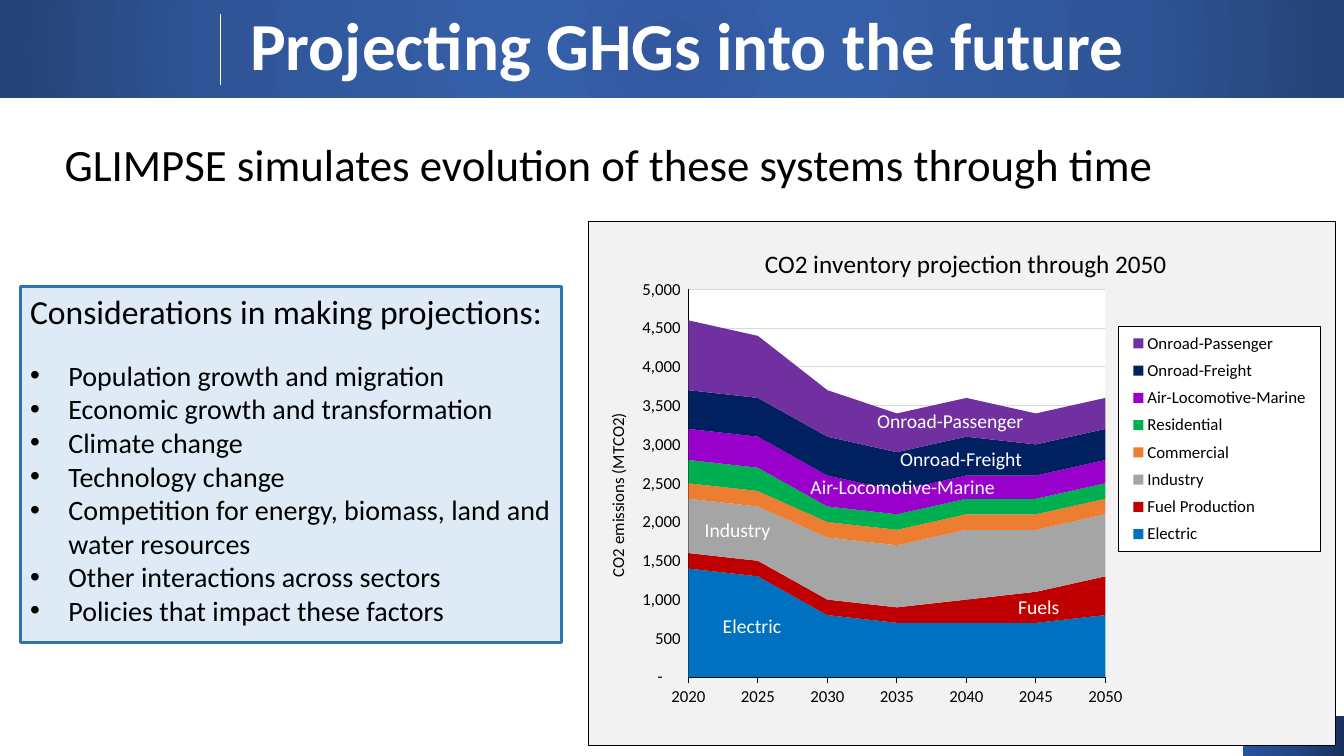
from lxml.etree import fromstring
from pptx import Presentation
from pptx.chart.data import CategoryChartData
from pptx.dml.color import RGBColor
from pptx.enum.chart import XL_CHART_TYPE, XL_LEGEND_POSITION, XL_TICK_MARK
from pptx.enum.shapes import MSO_CONNECTOR, MSO_SHAPE
from pptx.enum.text import MSO_ANCHOR, PP_ALIGN
from pptx.oxml import parse_xml
from pptx.oxml.ns import nsdecls, qn
from pptx.util import Inches, Pt

THEME = {
    "font": "Calibri",
    "white": RGBColor.from_string("FFFFFF"),
    "black": RGBColor.from_string("000000"),
    "grid": RGBColor.from_string("D9D9D9"),
    "box_fill": RGBColor.from_string("DEEBF7"),
    "box_line": RGBColor.from_string("2E75B6"),
    "header": [(0, "32599F"), (23, "355FA9"), (69, "2F5597"), (97, "264478")],
    "corner": [(0, "18315E"), (50, "224585"), (100, "28529E")],
    "title": Pt(48), "lead": Pt(32), "heading": Pt(24), "list": Pt(20),
    "chart_title": Pt(18), "label": Pt(14), "axis": Pt(12),
}

prs = Presentation()
prs.slide_width, prs.slide_height = Inches(13.33), Inches(7.5)
s = prs.slides.add_slide(prs.slide_layouts[1])


def at(x, y, w, h):
    """Turn percent shares of the slide into left, top, width, height."""
    across, down = prs.slide_width / 100, prs.slide_height / 100
    return int(x * across), int(y * down), int(w * across), int(h * down)


def style(font, size, color, bold=False):
    font.name, font.size, font.bold = THEME["font"], size, bold
    font.color.rgb = color


# Header band and corner block, behind the placeholders
RADIAL = ('<a:path path="circle"><a:fillToRect l="50000" t="50000" '
          'r="50000" b="50000"/></a:path>')
LINEAR = '<a:lin ang="10800000" scaled="0"/>'
bands = [("header", (0, 0, 100, 12.93), RADIAL),
         ("corner", (92.5, 94.67, 7.5, 5.33), LINEAR)]
for z, (name, place, direction) in enumerate(bands, start=2):
    sp = s.shapes.add_shape(MSO_SHAPE.RECTANGLE, *at(*place))
    sp.shadow.inherit = False
    sp.line.fill.background()
    sp.fill.background()
    stops = "".join(f'<a:gs pos="{pos * 1000}"><a:srgbClr val="{color}"/></a:gs>'
                    for pos, color in THEME[name])
    props = sp.element.spPr
    props.replace(props.find(qn("a:noFill")), parse_xml(
        f'<a:gradFill {nsdecls("a")}><a:gsLst>{stops}</a:gsLst>{direction}</a:gradFill>'))
    s.shapes.element.insert(z, sp.element)

# Header divider
x, top, _, height = at(16.43, 1.87, 0, 9.33)
divider = s.shapes.add_connector(MSO_CONNECTOR.STRAIGHT, x, top, x, top + height)
divider.line.color.rgb = THEME["white"]
divider.line.width = Pt(1)
divider.element.spPr.append(parse_xml(f'<a:effectLst {nsdecls("a")}/>'))

# Title and lead sentence
lead = s.placeholders[1]
texts = [
    (s.shapes.title, "Projecting GHGs into the future", (17.85, 0, 82.15, 12.8),
     THEME["title"], THEME["white"], True),
    (lead, "GLIMPSE simulates evolution of these systems through time",
     (4.05, 18.27, 95.95, 79.6), THEME["lead"], THEME["black"], False),
]
for sp, text, place, size, color, bold in texts:
    sp.left, sp.top, sp.width, sp.height = at(*place)
    sp.text_frame.text = text
    p = sp.text_frame.paragraphs[0]
    p.alignment, p.line_spacing, p.space_before = PP_ALIGN.LEFT, 0.9, Pt(0)
    style(p.runs[0].font, size, color, bold)
pPr = lead.text_frame.paragraphs[0]._p.get_or_add_pPr()
pPr.set("marL", "0")
pPr.set("indent", "0")
pPr.append(parse_xml(f'<a:buNone {nsdecls("a")}/>'))

# Emissions chart
emissions = [
    ("Electric", "0070C0", (1400, 1300, 800, 700, 700, 700, 800)),
    ("Fuel Production", "C00000", (200, 200, 200, 200, 300, 400, 500)),
    ("Industry", "A5A5A5", (700, 700, 800, 800, 900, 800, 800)),
    ("Commercial", "ED7D31", (200, 200, 200, 200, 200, 200, 200)),
    ("Residential", "00B050", (300, 300, 200, 200, 200, 200, 200)),
    ("Air-Locomotive-Marine", "9900CC", (400, 400, 400, 300, 300, 300, 300)),
    ("Onroad-Freight", "002060", (500, 500, 500, 500, 500, 400, 400)),
    ("Onroad-Passenger", "7030A0", (900, 800, 600, 500, 500, 400, 400)),
]
data = CategoryChartData()
data.categories = [str(year) for year in range(2020, 2051, 5)]
for name, _, values in emissions:
    data.add_series(name, values)
chart = s.shapes.add_chart(XL_CHART_TYPE.AREA_STACKED,
                           *at(43.74, 29.2, 55.66, 69.47), data).chart
style(chart.font, THEME["axis"], THEME["black"])
plot = chart.plots[0]
plot.vary_by_categories = False
for series, (_, color, _) in zip(plot.series, emissions):
    series.format.fill.solid()
    series.format.fill.fore_color.rgb = RGBColor.from_string(color)

years, amounts = chart.category_axis, chart.value_axis
for axis, tick in ((years, XL_TICK_MARK.OUTSIDE), (amounts, XL_TICK_MARK.NONE)):
    axis.major_tick_mark, axis.minor_tick_mark = tick, XL_TICK_MARK.NONE
    axis.format.line.color.rgb = THEME["black"]
    axis.format.line.width = Pt(0.75)
    style(axis.tick_labels.font, THEME["axis"], THEME["black"])
years.has_major_gridlines = False
amounts.minimum_scale, amounts.maximum_scale, amounts.major_unit = 0, 5000, 500
amounts.major_gridlines.format.line.color.rgb = THEME["grid"]
amounts.major_gridlines.format.line.width = Pt(0.75)
amounts.tick_labels.number_format = r'_(* #,##0_);_(* \(#,##0\);_(* "-"??_);_('
amounts.tick_labels.number_format_is_linked = False
for cross in amounts._element.findall(qn("c:crossBetween")):
    cross.set("val", "midCat")

chart.has_title = amounts.has_title = chart.has_legend = True
for title, text, size in (
        (chart.chart_title, "CO2 inventory projection through 2050", THEME["chart_title"]),
        (amounts.axis_title, "CO2 emissions (MTCO2)", THEME["axis"])):
    title.text_frame.text = text
    style(title.text_frame.paragraphs[0].runs[0].font, size, THEME["black"])
chart.legend.position = XL_LEGEND_POSITION.RIGHT
chart.legend.include_in_layout = False
style(chart.legend.font, THEME["axis"], THEME["black"])

# Chart parts placed as shares of the chart
area = chart.element.find(qn("c:chart")).find(qn("c:plotArea"))
legend = chart.legend._element
for part, before, spots in (
        (area, None, {"x": 0.134, "y": 0.13, "w": 0.558, "h": 0.74}),
        (legend, "c:legendPos", {"x": 0.71, "y": 0.2, "w": 0.27, "h": 0.43}),
        (chart.chart_title._element, "c:tx", {"x": 0.23, "y": 0.04}),
        (amounts.axis_title._element, "c:tx", {"x": 0.02, "y": 0.36})):
    for old in part.findall(qn("c:layout")):
        part.remove(old)
    target = '<c:layoutTarget val="inner"/>' if part is area else ""
    modes = "".join(f'<c:{k}Mode val="edge"/>' for k in "xy")
    sizes = "".join(f'<c:{k} val="{v}"/>' for k, v in spots.items())
    layout = parse_xml(f'<c:layout {nsdecls("c")}><c:manualLayout>{target}{modes}{sizes}'
                       '</c:manualLayout></c:layout>')
    if before:
        part.find(qn(before)).addnext(layout)
    else:
        part.insert(0, layout)

# Chart, plot and legend backgrounds
for last, fill, line in ((chart.element.find(qn("c:chart")), "F2F2F2", "000000"),
                         (area[-1], "FFFFFF", None),
                         (legend.find(qn("c:overlay")), "FFFFFF", "000000")):
    solid = '<a:solidFill><a:srgbClr val="{}"/></a:solidFill>'
    edge = solid.format(line) if line else "<a:noFill/>"
    last.addnext(parse_xml(f'<c:spPr {nsdecls("c", "a")}>{solid.format(fill)}'
                           f'<a:ln w="9525">{edge}</a:ln></c:spPr>'))

# Labels on the chart areas
for text, x, y, w in (("Electric", 53.04, 80.53, 5.93), ("Industry", 51.69, 67.87, 6.45),
                      ("Onroad-Passenger", 64.52, 53.47, 12.53),
                      ("Onroad-Freight", 66.24, 58.4, 10.65),
                      ("Air-Locomotive-Marine", 59.56, 62.13, 15.38),
                      ("Fuels", 75.02, 78, 4.65)):
    tf = s.shapes.add_textbox(*at(x, y, w, 4.53)).text_frame
    tf.word_wrap = False
    tf.text = text
    style(tf.paragraphs[0].runs[0].font, THEME["label"], THEME["white"])

# Considerations box
sp = s.shapes.add_shape(MSO_SHAPE.RECTANGLE, *at(1.5, 37.87, 40.28, 47.07))
sp.shadow.inherit = False
sp.fill.solid()
sp.fill.fore_color.rgb = THEME["box_fill"]
sp.line.color.rgb = THEME["box_line"]
sp.line.width = Pt(2.25)
tf = sp.text_frame
tf.word_wrap, tf.vertical_anchor = True, MSO_ANCHOR.TOP
tf.text = "\n".join((
    "Considerations in making projections:", "Population growth and migration",
    "Economic growth and transformation", "Climate change", "Technology change",
    "Competition for energy, biomass, land and water resources",
    "Other interactions across sectors", "Policies that impact these factors"))
for i, p in enumerate(tf.paragraphs):
    p.alignment = PP_ALIGN.LEFT
    if i == 1:
        p.space_before = Pt(19)
    if i:
        pPr = p._p.get_or_add_pPr()
        pPr.set("marL", str(Inches(0.38)))
        pPr.set("indent", str(-Inches(0.38)))
        pPr.append(parse_xml(f'<a:buFont {nsdecls("a")} typeface="Arial"/>'))
        pPr.append(parse_xml(f'<a:buChar {nsdecls("a")} char="•"/>'))
    style(p.runs[0].font, THEME["list" if i else "heading"], THEME["black"])

prs.save("out.pptx")
